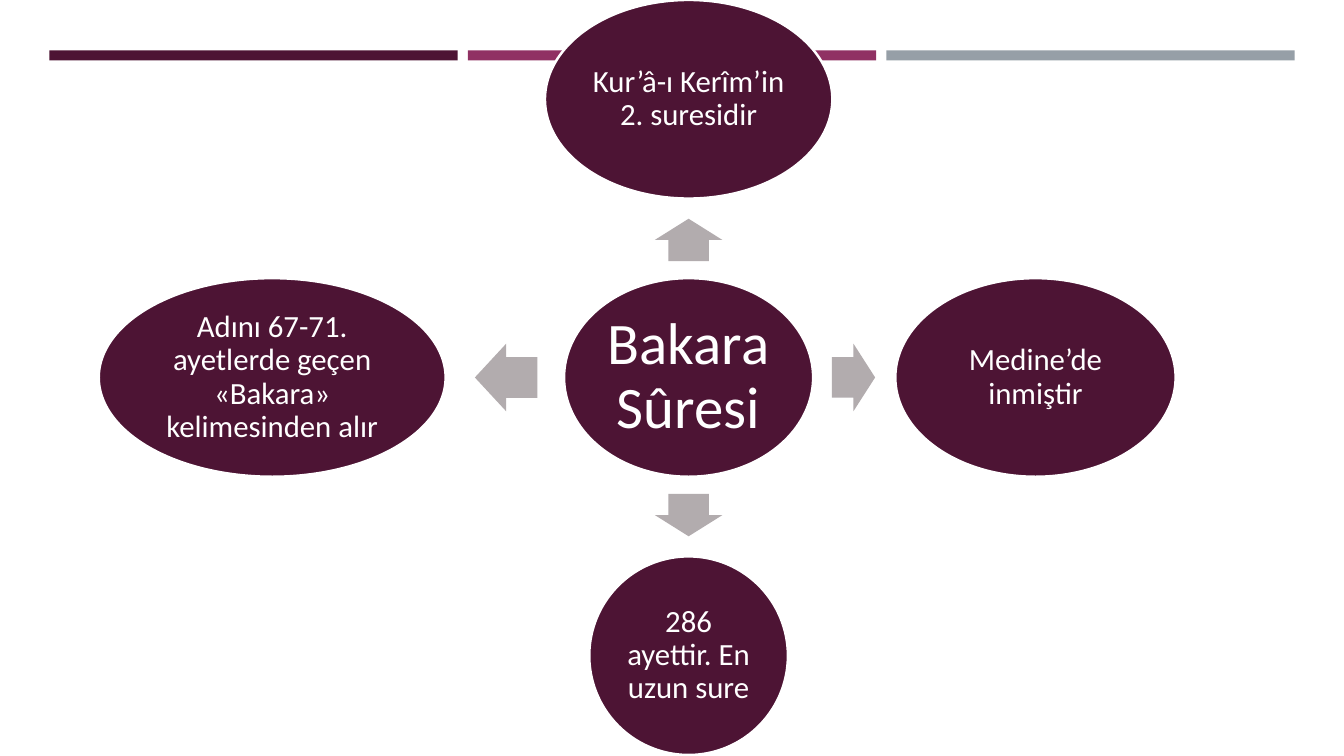
from pptx import Presentation
from pptx.dml.color import RGBColor
from pptx.enum.shapes import MSO_SHAPE
from pptx.enum.text import MSO_ANCHOR, PP_ALIGN
from pptx.util import Inches, Pt

RECT = MSO_SHAPE.RECTANGLE
OVAL = MSO_SHAPE.OVAL
ARROW = MSO_SHAPE.RIGHT_ARROW
MIDDLE = MSO_ANCHOR.MIDDLE
CENTER = PP_ALIGN.CENTER

PLUM = RGBColor(0x4D, 0x14, 0x34)
BERRY = RGBColor(0x90, 0x31, 0x63)
STEEL = RGBColor(0x96, 0x9F, 0xA7)
GRAY = RGBColor(0xB2, 0xAC, 0xAE)
WHITE = RGBColor(0xFF, 0xFF, 0xFF)

HUB_X, HUB_Y = 6.83, 3.745
STEP_Y = 2.76
OVAL_H = 1.97
ARROW_Y = 1.365

BARS = [PLUM, BERRY, STEEL]
# centre x, centre y, width, text
FACTS = [
    (HUB_X, HUB_Y - STEP_Y, 2.85, "Kur’â-ı Kerîm’in 2. suresidir"),
    (10.27, HUB_Y, 2.78, "Medine’de inmiştir"),
    (HUB_X, HUB_Y + STEP_Y, OVAL_H, "286 ayettir. En uzun sure"),
    (2.7, HUB_Y, 3.44,
     "Adını 67-71. ayetlerde geçen «Bakara» kelimesinden alır"),
]
# centre x, centre y, length, rotation
ARROWS = [
    (HUB_X, HUB_Y - ARROW_Y, 0.42, 270),
    (8.465, HUB_Y, 0.43, 0),
    (HUB_X, HUB_Y + ARROW_Y, 0.42, 90),
    (5.02, HUB_Y, 0.62, 180),
]


def add_solid(slide, kind, x, y, width, height, color):
    """Add a filled shape without outline, centred on x, y."""
    shape = slide.shapes.add_shape(
        kind, Inches(x - width / 2), Inches(y - height / 2),
        Inches(width), Inches(height))
    shape.shadow.inherit = False
    shape.fill.solid()
    shape.fill.fore_color.rgb = color
    shape.line.fill.background()
    return shape


def add_oval(slide, x, y, width, text, size=22, inset=0.03):
    oval = add_solid(slide, OVAL, x, y, width, OVAL_H, PLUM)
    oval.line.color.rgb = WHITE
    oval.line.width = Pt(1.75)
    frame = oval.text_frame
    frame.word_wrap = True
    frame.vertical_anchor = MIDDLE
    frame.margin_left = frame.margin_right = Inches(inset)
    frame.margin_top = frame.margin_bottom = Inches(inset)
    frame.text = text
    para = frame.paragraphs[0]
    para.alignment = CENTER
    para.line_spacing = 0.9
    font = para.runs[0].font
    font.name = "Calibri"
    font.size = Pt(size)
    font.color.rgb = WHITE


def add_arrow(slide, x, y, length, angle):
    arrow = add_solid(slide, ARROW, x, y, length, 0.67, GRAY)
    arrow.adjustments[0] = 0.6
    arrow.adjustments[1] = 0.5
    arrow.rotation = angle


def main():
    deck = Presentation()
    deck.slide_width = Inches(13.33)
    deck.slide_height = Inches(7.5)
    slide = deck.slides.add_slide(deck.slide_layouts[6])

    for i, color in enumerate(BARS):
        add_solid(slide, RECT, 2.515 + 4.15 * i, 0.55, 4.05, 0.1, color)
    add_oval(slide, HUB_X, HUB_Y, 2.47, "Bakara Sûresi", 42, 0.06)
    for arrow, fact in zip(ARROWS, FACTS):
        add_arrow(slide, *arrow)
        add_oval(slide, *fact)

    deck.save("out.pptx")


if __name__ == "__main__":
    main()
